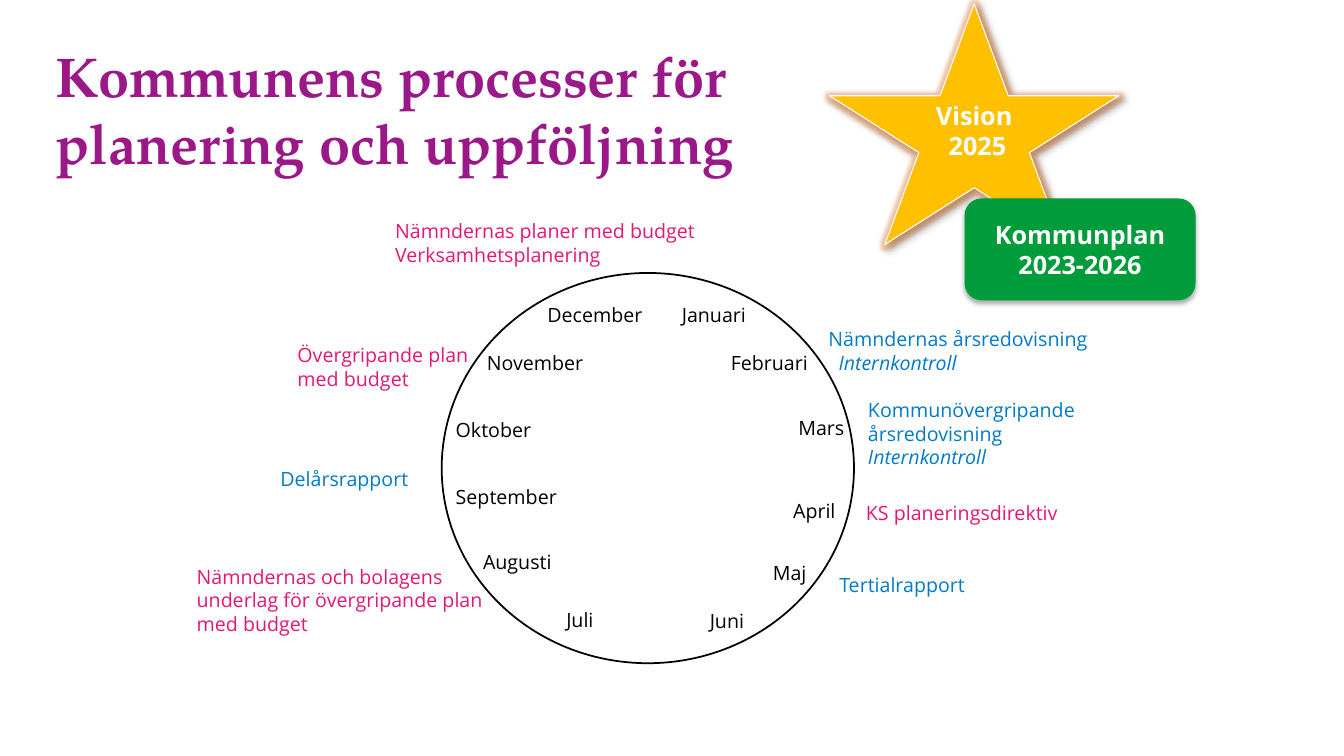
from dataclasses import dataclass

from lxml import etree
from pptx import Presentation
from pptx.dml.color import RGBColor
from pptx.enum.shapes import MSO_SHAPE
from pptx.enum.text import MSO_ANCHOR, PP_ALIGN
from pptx.oxml.ns import qn
from pptx.shapes.autoshape import Shape
from pptx.slide import Slide
from pptx.util import Pt

ELLIPSE = MSO_SHAPE.OVAL
STAR = MSO_SHAPE.STAR_5_POINT
ROUNDED = MSO_SHAPE.ROUNDED_RECTANGLE
TOP, MIDDLE = MSO_ANCHOR.TOP, MSO_ANCHOR.MIDDLE
LEFT, CENTER = PP_ALIGN.LEFT, PP_ALIGN.CENTER

BODY_FONT = "Open Sans"
TITLE_FONT = "TeX Gyre Pagella"
BLACK, WHITE = "000000", "FFFFFF"
PINK, BLUE = "E21776", "007AC9"
PURPLE, GOLD, GREEN = "9B1889", "FFC000", "009B3A"
ORANGE = "ED7D31"
LABEL_HEIGHT, LINE_STEP = 23, 17


@dataclass(frozen=True)
class Line:
    text: str
    italic: bool = False
    indent: float = 0


@dataclass(frozen=True)
class Style:
    size: float = 14
    color: str = BLACK
    font: str = BODY_FONT
    bold: bool = False
    align: PP_ALIGN = LEFT


@dataclass(frozen=True)
class Label:
    left: float
    top: float
    width: float
    color: str
    lines: tuple[Line, ...]
    rows: int = 1


@dataclass(frozen=True)
class Month:
    name: str
    left: float
    top: float
    width: float


@dataclass(frozen=True)
class Shadow:
    alpha: int
    blur: float
    distance: float
    angle: int


MONTHS = (
    Month("Januari", 480.5, 213, 87),
    Month("Februari", 515.5, 247.5, 88),
    Month("Mars", 563.75, 293.75, 60.5),
    Month("April", 560, 353, 63),
    Month("Maj", 545.5, 397.5, 57),
    Month("Juni", 500.5, 432, 72),
    Month("Juli", 398, 431.25, 72),
    Month("Augusti", 338.5, 389.5, 98.5),
    Month("September", 319, 343.5, 115),
    Month("Oktober", 319, 295.25, 89.5),
    Month("November", 341.25, 247.5, 82),
    Month("December", 384.5, 213, 81.5),
)

LABELS = (
    Label(275.75, 153.5, 413, PINK,
          (Line("Nämndernas planer med budget"), Line("Verksamhetsplanering")), 2),
    Label(206, 242, 193, PINK,
          (Line("Övergripande plan"), Line("med budget")), 2),
    Label(193.75, 330.5, 156, BLUE, (Line("Delårsrapport"),)),
    Label(134, 400.25, 241, PINK,
          (Line("Nämndernas och bolagens underlag för övergripande plan med budget"),), 3),
    Label(585.25, 230.5, 241, BLUE,
          (Line("Nämndernas årsredovisning"),
           Line("Internkontroll", italic=True, indent=7.25)), 2),
    Label(613.5, 281.5, 242, BLUE,
          (Line("Kommunövergripande årsredovisning"),
           Line("Internkontroll", italic=True)), 3),
    Label(612, 354.5, 206, PINK, (Line("KS planeringsdirektiv"),)),
    Label(593, 406, 227.5, BLUE, (Line("Tertialrapport"),)),
)


def rgb(color: str) -> RGBColor:
    return RGBColor.from_string(color)


def write_text(shape: Shape, lines: tuple[Line, ...], style: Style,
               anchor: MSO_ANCHOR = TOP) -> None:
    frame = shape.text_frame
    frame.word_wrap = True
    frame.vertical_anchor = anchor
    frame.margin_left = frame.margin_right = Pt(6.5)
    frame.margin_top = frame.margin_bottom = Pt(3)
    for index, line in enumerate(lines):
        paragraph = frame.add_paragraph() if index else frame.paragraphs[0]
        paragraph.alignment = style.align
        if line.indent:
            paragraph._p.get_or_add_pPr().set("marL", str(Pt(line.indent)))
        run = paragraph.add_run()
        run.text = line.text
        font = run.font
        font.name, font.size = style.font, Pt(style.size)
        font.bold, font.italic = style.bold, line.italic
        font.color.rgb = rgb(style.color)


def add_text(slide: Slide, left: float, top: float, width: float, height: float,
             lines: tuple[Line, ...], style: Style, anchor: MSO_ANCHOR = TOP) -> Shape:
    box = slide.shapes.add_textbox(Pt(left), Pt(top), Pt(width), Pt(height))
    write_text(box, lines, style, anchor)
    return box


def add_figure(slide: Slide, kind: MSO_SHAPE, left: float, top: float, width: float,
               height: float, fill: str, line: str = "", weight: float = 0) -> Shape:
    shape = slide.shapes.add_shape(kind, Pt(left), Pt(top), Pt(width), Pt(height))
    shape.shadow.inherit = False
    shape.fill.solid()
    shape.fill.fore_color.rgb = rgb(fill)
    if line:
        shape.line.color.rgb = rgb(line)
        shape.line.width = Pt(weight)
    else:
        shape.line.fill.background()
    return shape


def add_effect(shape: Shape, tag: str, color: str, alpha: int,
               attributes: dict[str, int]) -> None:
    effects = shape._element.spPr.find(qn("a:effectLst"))
    effect = etree.SubElement(effects, qn(tag))
    for name, value in attributes.items():
        effect.set(name, str(value))
    tint = etree.SubElement(effect, qn("a:srgbClr"), val=color)
    etree.SubElement(tint, qn("a:alpha"), val=str(alpha * 1000))


def add_shadow(shape: Shape, shadow: Shadow) -> None:
    add_effect(shape, "a:outerShdw", BLACK, shadow.alpha, {
        "blurRad": Pt(shadow.blur), "dist": Pt(shadow.distance),
        "dir": shadow.angle * 60000, "rotWithShape": 0})


def main() -> None:
    presentation = Presentation()
    presentation.slide_width, presentation.slide_height = Pt(960), Pt(540)
    slide = presentation.slides.add_slide(presentation.slide_layouts[6])

    add_figure(slide, ELLIPSE, 315.5, 195, 294.5, 278.75, WHITE, BLACK, 1.25)
    for month in MONTHS:
        add_text(slide, month.left, month.top, month.width, LABEL_HEIGHT,
                 (Line(month.name),), Style())
    for label in LABELS:
        height = LABEL_HEIGHT + LINE_STEP * (label.rows - 1)
        add_text(slide, label.left, label.top, label.width, height,
                 label.lines, Style(color=label.color))

    badge_style = Style(size=18, color=WHITE, bold=True, align=CENTER)
    vision = add_figure(slide, STAR, 592.5, 2.75, 206.75, 172, GOLD, WHITE, 0.75)
    add_effect(vision, "a:glow", ORANGE, 40, {"rad": Pt(5)})
    add_shadow(vision, Shadow(alpha=40, blur=4, distance=3, angle=45))
    write_text(vision, (Line("Vision"), Line("2025", indent=4.75)), badge_style)

    plan = add_figure(slide, ROUNDED, 689, 141.75, 165, 72.75, GREEN)
    add_shadow(plan, Shadow(alpha=32, blur=3.5, distance=2.2, angle=90))
    write_text(plan, (Line("Kommunplan 2023-2026"),), badge_style, MIDDLE)

    title = add_text(slide, 32.5, 32.5, 648, 90,
                     (Line("Kommunens processer för"), Line("planering och uppföljning")),
                     Style(size=40, color=PURPLE, font=TITLE_FONT, bold=True), MIDDLE)
    title.text_frame.margin_left = Pt(7.2)
    for paragraph in title.text_frame.paragraphs:
        paragraph.line_spacing = Pt(48)

    presentation.save("out.pptx")


if __name__ == "__main__":
    main()
